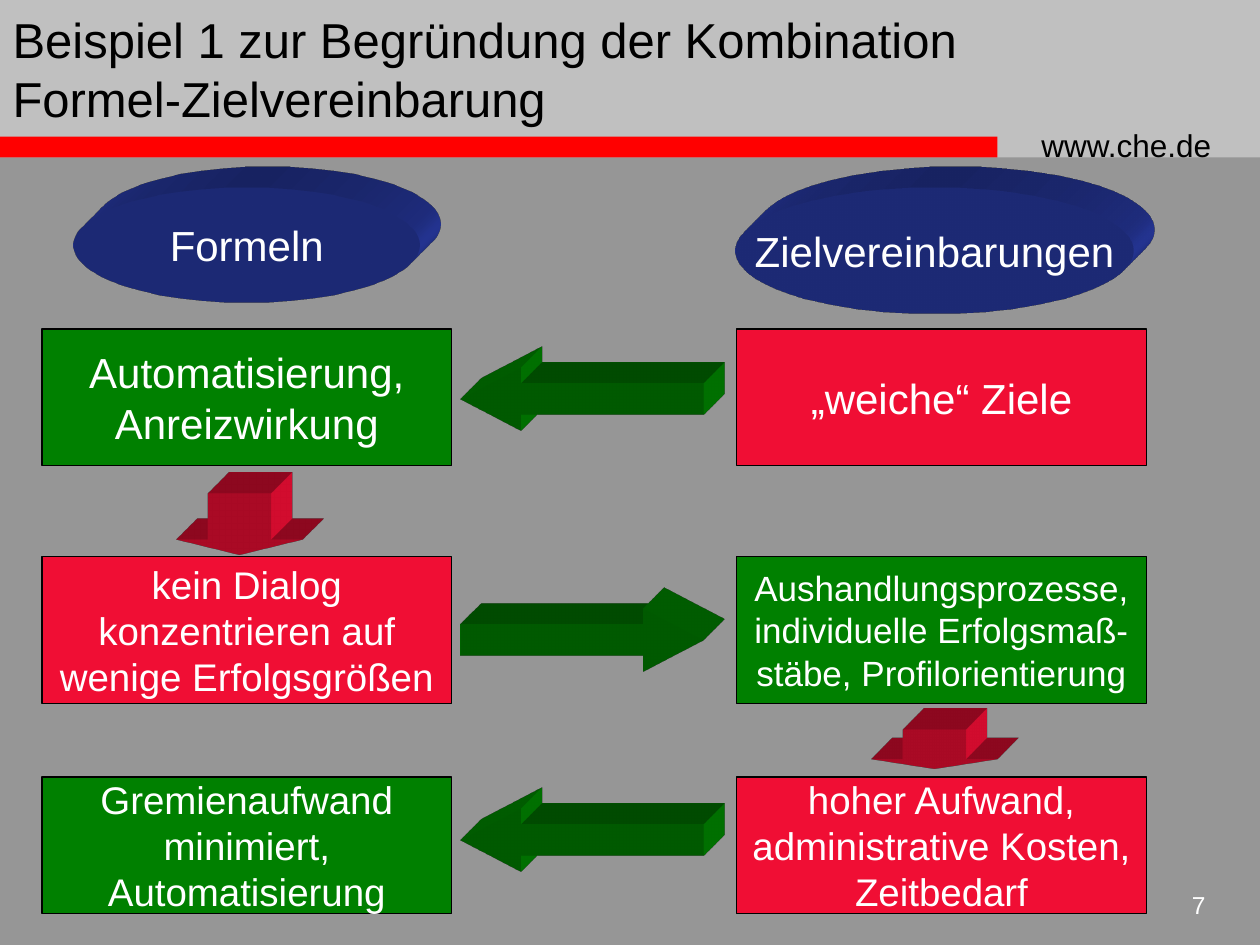
from lxml.etree import fromstring
from pptx import Presentation
from pptx.dml.color import RGBColor
from pptx.enum.shapes import MSO_SHAPE
from pptx.enum.text import MSO_ANCHOR, MSO_AUTO_SIZE, PP_ALIGN
from pptx.util import Pt

BLACK = RGBColor(0, 0, 0)
WHITE = RGBColor(255, 255, 255)
GRAY = RGBColor(0x96, 0x96, 0x96)
SILVER = RGBColor(0xC0, 0xC0, 0xC0)
BAR = RGBColor(255, 0, 0)
BLUE = RGBColor(0x29, 0x3B, 0xA5)
GREEN = RGBColor(0, 0x80, 0)
RED = RGBColor(0xF0, 0x0E, 0x34)
NS = "http://schemas.openxmlformats.org/drawingml/2006/main"
DEPTH = (
    f'<a:scene3d xmlns:a="{NS}"><a:camera prst="legacyObliqueTopRight"/>'
    '<a:lightRig rig="legacyFlat3" dir="b"/></a:scene3d>',
    f'<a:sp3d xmlns:a="{NS}" extrusionH="430200" prstMaterial="legacyMatte">'
    '<a:bevelT w="13500" h="13500" prst="angle"/>'
    '<a:bevelB w="13500" h="13500" prst="angle"/>'
    '<a:extrusionClr><a:srgbClr val="{}"/></a:extrusionClr></a:sp3d>',
)


def write(shape, text, size=24, color=WHITE, align=PP_ALIGN.CENTER, wrap=False):
    frame = shape.text_frame
    frame.auto_size = MSO_AUTO_SIZE.NONE
    frame.word_wrap = wrap
    frame.vertical_anchor = MSO_ANCHOR.MIDDLE
    frame.text = text
    for para in frame.paragraphs:
        para.alignment = align
        para.font.name = "Arial"
        para.font.size = Pt(size)
        para.font.color.rgb = color


def draw(kind, box, fill, edge=False, deep=False):
    """Add a filled shape, with a black outline or an extrusion if asked."""
    shape = slide.shapes.add_shape(kind, *map(Pt, box))
    shape.shadow.inherit = False
    shape.fill.solid()
    shape.fill.fore_color.rgb = fill
    if edge:
        shape.line.color.rgb = BLACK
        shape.line.width = Pt(0.75)
    else:
        shape.line.fill.background()
    if deep:
        for part in DEPTH:
            shape._element.spPr.append(fromstring(part.replace("{}", str(fill))))
    return shape


prs = Presentation()
prs.slide_width, prs.slide_height = Pt(720), Pt(540)
slide = prs.slides.add_slide(prs.slide_layouts[5])
slide.background.fill.solid()
slide.background.fill.fore_color.rgb = GRAY

# Header
band = draw(MSO_SHAPE.RECTANGLE, (0, 0, 720, 90), SILVER)
bar = draw(MSO_SHAPE.RECTANGLE, (0, 78, 570, 12), BAR)
title = slide.shapes.title
title.left, title.top, title.width, title.height = map(Pt, (0, 0, 582, 78))
write(title, "Beispiel 1 zur Begründung der Kombination Formel-Zielvereinbarung",
      size=28, color=BLACK, align=PP_ALIGN.LEFT, wrap=True)
tree = slide.shapes._spTree
tree.remove(title._element)
tree.append(title._element)

labels = [
    ("www.che.de", (588, 68, 126, 29), 18, BLACK, PP_ALIGN.LEFT),
    ("7", (654, 502, 42, 30), 14, WHITE, PP_ALIGN.RIGHT),
]
for text, box, size, color, align in labels:
    label = slide.shapes.add_textbox(*map(Pt, box))
    write(label, text, size=size, color=color, align=align, wrap=True)

# Column heads
heads = [
    ("Formeln", (42, 107, 198, 66)),
    ("Zielvereinbarungen", (420, 107, 228, 72)),
]
for text, box in heads:
    write(draw(MSO_SHAPE.OVAL, box, BLUE, deep=True), text)

# Boxes: top and height of each row, then text, size and fill per column
LEFT, RIGHT, WIDE = 24, 421, 234
rows = [
    (188, 78, ("Automatisierung,\nAnreizwirkung", 24, GREEN),
     ("„weiche“ Ziele", 24, RED)),
    (318, 84, ("kein Dialog\nkonzentrieren auf\nwenige Erfolgsgrößen", 22, RED),
     ("Aushandlungsprozesse,\nindividuelle Erfolgsmaß-\nstäbe, Profilorientierung",
      20, GREEN)),
    (444, 78, ("Gremienaufwand\nminimiert,\nAutomatisierung", 22, GREEN),
     ("hoher Aufwand,\nadministrative Kosten,\nZeitbedarf", 22, RED)),
]
for top, high, *cells in rows:
    for left, (text, size, fill) in zip((LEFT, RIGHT), cells):
        box = draw(MSO_SHAPE.RECTANGLE, (left, top, WIDE, high), fill, edge=True)
        write(box, text, size=size)

# Arrows across the columns and down the rows
for top, turn in ((210, 0), (348, 180), (462, 0)):
    arrow = draw(MSO_SHAPE.LEFT_ARROW, (263, top, 139, 36), GREEN, deep=True)
    arrow.adjustments[1] = 0.965
    arrow.rotation = turn
for left, top, high in ((101, 282, 35), (498, 417, 22)):
    arrow = draw(MSO_SHAPE.DOWN_ARROW, (left, top, 72, high), RED, deep=True)
    arrow.adjustments[1] = 0.25

prs.save("out.pptx")
